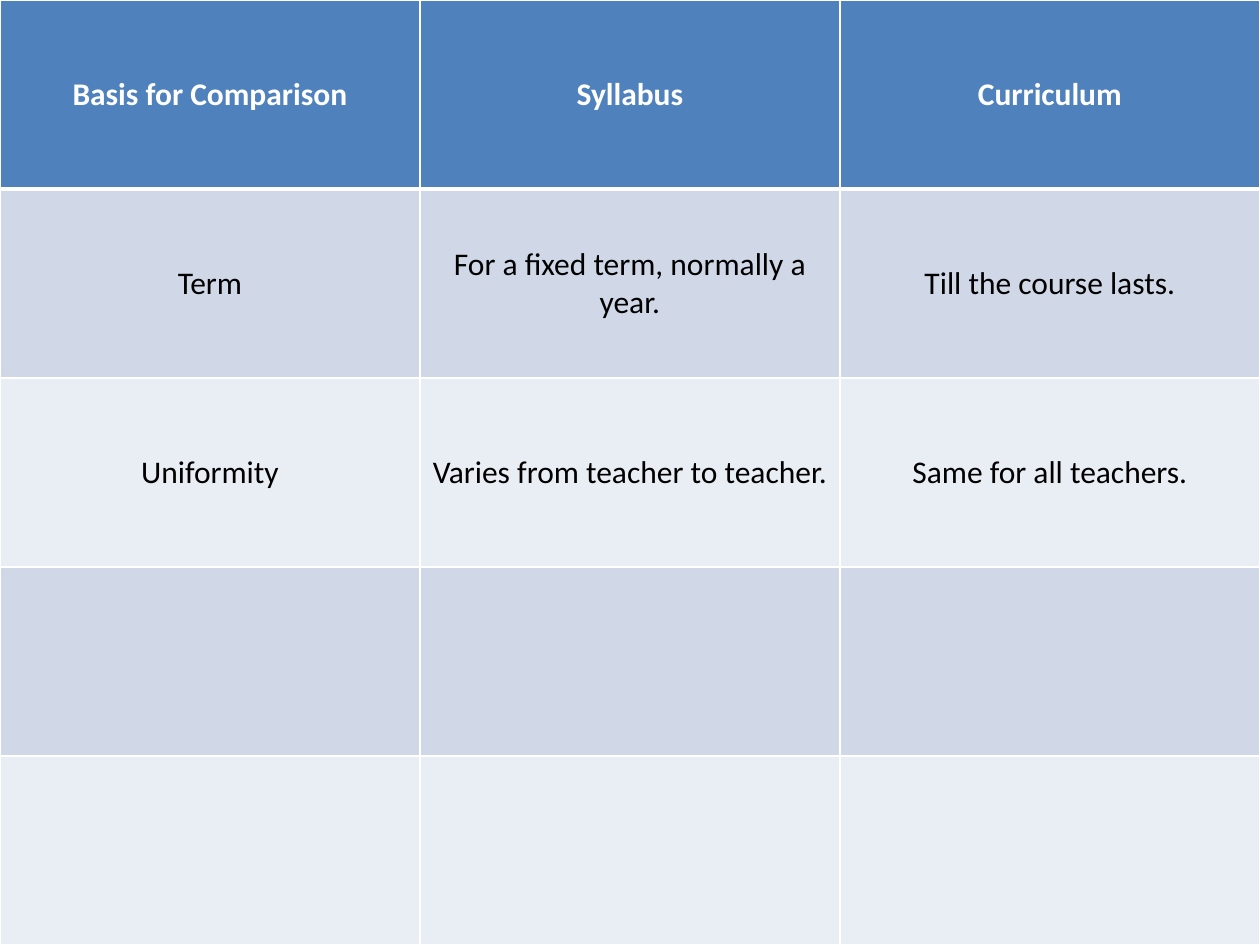
from lxml import etree
from pptx import Presentation
from pptx.dml.color import RGBColor
from pptx.enum.text import MSO_ANCHOR, PP_ALIGN
from pptx.oxml.ns import qn
from pptx.util import Cm, Pt

CENTER = PP_ALIGN.CENTER
MIDDLE = MSO_ANCHOR.MIDDLE
WIDTH, HEIGHT = Cm(25.4), Cm(19.05)
FONT = "Calibri"
WHITE, BLACK = "FFFFFF", "000000"
HEADER_FILL = "4F81BD"
BAND_FILLS = ("D0D8E8", "E9EDF4")

COMPARISON = [
    ("Basis for Comparison", "Syllabus", "Curriculum"),
    ("Term", "For a fixed term, normally a year.", "Till the course lasts."),
    ("Uniformity", "Varies from teacher to teacher.", "Same for all teachers."),
    ("", "", ""),
    ("", "", ""),
]


def rgb(value):
    return RGBColor.from_string(value)


def write_text(tf, text, size=18, color=BLACK, bold=False, align=CENTER):
    p = tf.paragraphs[0]
    p.alignment = align
    r = p.add_run()
    r.text = text
    r.font.name = FONT
    r.font.size = Pt(size)
    r.font.bold = bold
    r.font.color.rgb = rgb(color)


def set_borders(cell, color=WHITE, **widths):
    """Draw the cell's borders; widths in points, keyed L, R, T and B."""
    tc_pr = cell._tc.get_or_add_tcPr()
    for side, width in widths.items():
        ln = etree.SubElement(tc_pr, qn(f"a:ln{side}"), w=str(Pt(width)))
        fill = etree.SubElement(ln, qn("a:solidFill"))
        etree.SubElement(fill, qn("a:srgbClr"), val=color)


def add_comparison_table(s, rows, left, top, width, height):
    n_rows, n_cols = len(rows), len(rows[0])
    table = s.shapes.add_table(n_rows, n_cols, left, top, width, height).table
    for row in table.rows:
        row.height = height // n_rows
    for i, texts in enumerate(rows):
        header = i == 0
        for j, text in enumerate(texts):
            cell = table.cell(i, j)
            # A thick rule separates the header from the body
            set_borders(cell, L=1, R=1, T=3 if i == 1 else 1, B=3 if header else 1)
            cell.fill.solid()
            cell.fill.fore_color.rgb = rgb(HEADER_FILL if header else BAND_FILLS[(i - 1) % 2])
            cell.vertical_anchor = MIDDLE
            if text:
                write_text(cell.text_frame, text, color=WHITE if header else BLACK, bold=header)


def main():
    prs = Presentation()
    prs.slide_width, prs.slide_height = WIDTH, HEIGHT
    s = prs.slides.add_slide(prs.slide_layouts[6])
    # The table fills the whole slide
    add_comparison_table(s, COMPARISON, Cm(0), Cm(0), WIDTH, HEIGHT)
    prs.save("out.pptx")


if __name__ == "__main__":
    main()
